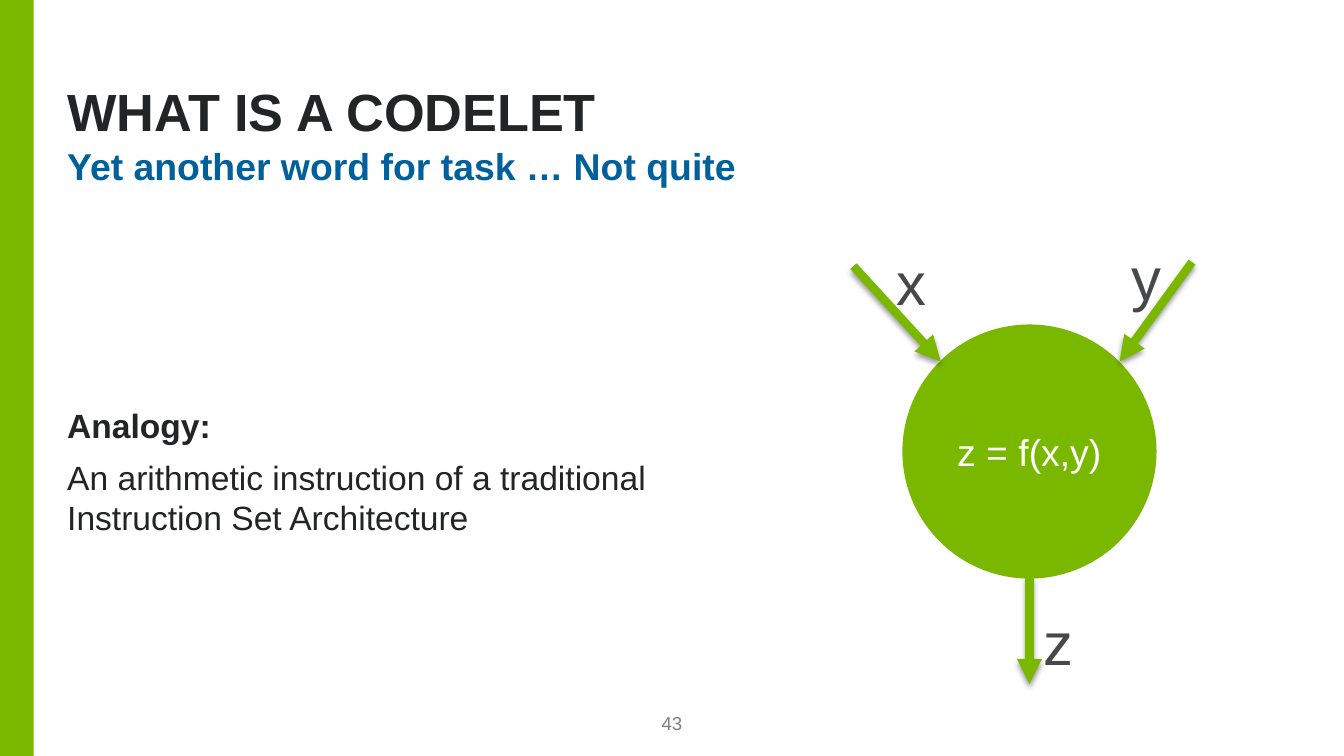
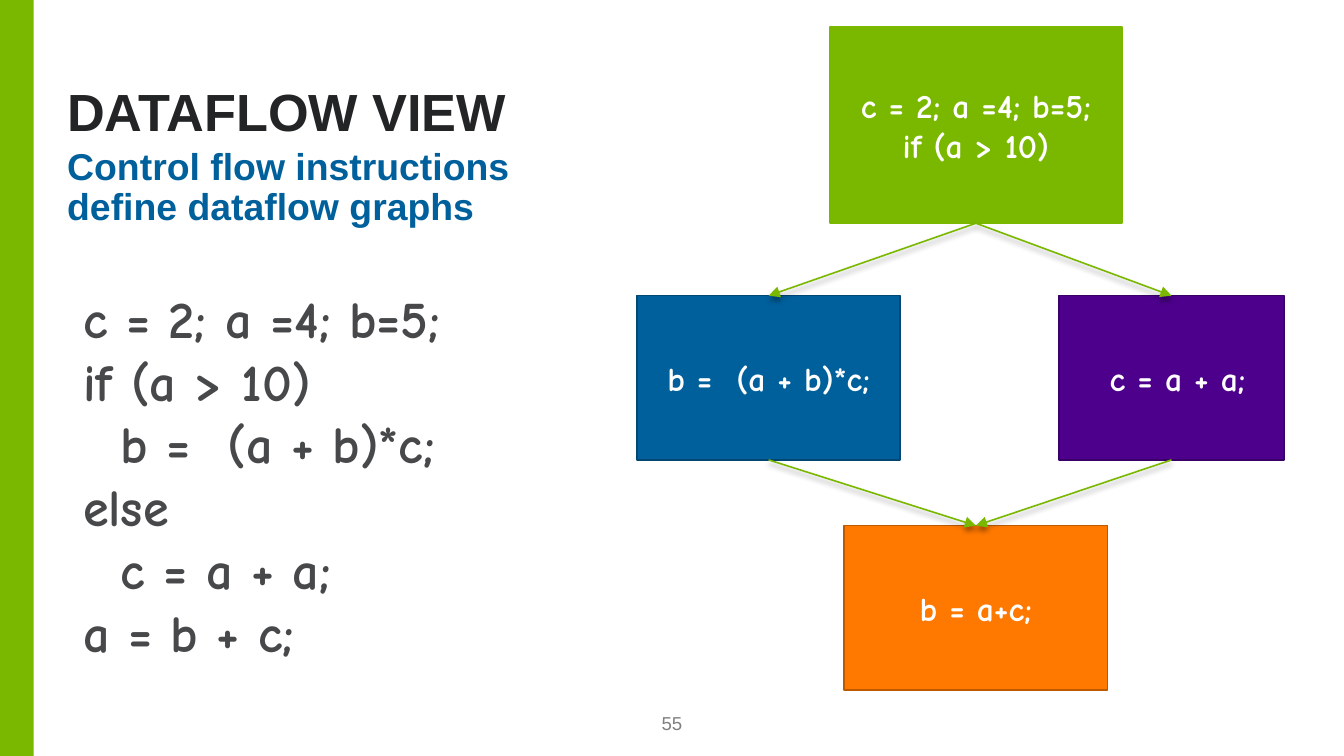
from pptx import Presentation
from pptx.dml.color import RGBColor
from pptx.enum.shapes import MSO_CONNECTOR as LINK, MSO_SHAPE as SHAPE
from pptx.enum.text import MSO_ANCHOR as ANCHOR, MSO_AUTO_SIZE as FIT, PP_ALIGN as ALIGN
from pptx.oxml import parse_xml
from pptx.oxml.ns import nsdecls, qn
from pptx.util import Pt

WIDE, HIGH, LEFT = 720, 405, 36
GREEN, BLUE, PURPLE, ORANGE = "7AB800", "00609C", "4D008C", "FF7900"
INK, SLATE, GRAY, WHITE = "232425", "47484A", "808080", "FFFFFF"
SANS, HAND = "Arial", "Comic Neue"

ANALOGY = [
    ("Analogy:", True, 2),
    ("An arithmetic instruction of a traditional Instruction Set Architecture", False, 1),
]
CIRCLE = (483.8, 174.2, 135.4, 135.4)
FLOWS = [  # label, label left and top, arrow start, arrow end
    ("z", (552.2, 321.1), (551.5, 309), (551.5, 366.5)),
    ("x", (473, 128.2), (457.2, 142.6), (504, 193.7)),
    ("y", (599, 125.3), (638.6, 140.4), (599.8, 193.7)),
]

CODE = ["c = 2; a =4; b=5;", "if (a > 10)", "  b =  (a + b)*c;", "else", "  c = a + a;", "a = b + c;"]
MID = 522.8
BLOCKS = {  # centre x, top, width, height, fill, outline, outline width, lines
    "test": (MID, 14.4, 156.4, 105.2, GREEN, GREEN, 0.75, CODE[:2]),
    "then": (411.8, 158.4, 141, 88, BLUE, "004773", 0.85, ["b =  (a + b)*c;"]),
    "else": (627.6, 158.4, 120.4, 88, PURPLE, "390068", 0.85, [" c = a + a;"]),
    "join": (MID, 281.6, 141, 88, ORANGE, "BD5A00", 0.85, ["b = a+c;"]),
}
EDGES = [("test", "then"), ("test", "else"), ("then", "join"), ("else", "join")]


def rgb(code):
    return RGBColor.from_string(code)


def pts(*nums):
    return [Pt(n) for n in nums]


def write(shape, lines, size=18, color=INK, font=SANS, bold=False, align=ALIGN.LEFT,
          anchor=ANCHOR.TOP, space=None, inset=None, wrap=True, fit=FIT.NONE):
    """Fill a shape with paragraphs; a line is text or (text, bold, spacing)."""
    frame = shape.text_frame
    frame.word_wrap, frame.auto_size, frame.vertical_anchor = wrap, fit, anchor
    if inset:
        (frame.margin_left, frame.margin_top,
         frame.margin_right, frame.margin_bottom) = pts(*inset)
    for i, line in enumerate(lines):
        text, heavy, lead = (line, bold, space) if isinstance(line, str) else line
        para = frame.add_paragraph() if i else frame.paragraphs[0]
        para.alignment, para.line_spacing = align, lead
        if i and not isinstance(line, str):
            para.space_before = Pt(6)
        run = para.add_run()
        run.text = text
        run.font.name, run.font.size, run.font.bold = font, Pt(size), heavy
        run.font.color.rgb = rgb(color)


def label(slide, box, lines, **style):
    write(slide.shapes.add_textbox(*pts(*box)), lines, **style)


def solid(slide, kind, box, fill, edge=None, width=0.75):
    shape = slide.shapes.add_shape(kind, *pts(*box))
    shape.shadow.inherit = False
    shape.fill.solid()
    shape.fill.fore_color.rgb = rgb(fill)
    if edge:
        shape.line.color.rgb = rgb(edge)
        shape.line.width = Pt(width)
    else:
        shape.line.fill.background()
    return shape


def arrow(slide, start, end, width):
    link = slide.shapes.add_connector(LINK.STRAIGHT, *pts(*start, *end))
    link.line.color.rgb = rgb(GREEN)
    link.line.width = Pt(width)
    props = link.element.spPr
    props.find(qn("a:ln")).append(parse_xml(f'<a:tailEnd {nsdecls("a")} type="triangle"/>'))
    props.append(parse_xml(
        f'<a:effectLst {nsdecls("a")}>'
        f'<a:outerShdw blurRad="{Pt(3)}" dist="{Pt(2)}" dir="5400000" rotWithShape="0">'
        '<a:srgbClr val="000000"><a:alpha val="40000"/></a:srgbClr>'
        '</a:outerShdw></a:effectLst>'))
    return link


def start(deck, title, sub, page):
    """Add a slide with the green band, headings and page number."""
    slide = deck.slides.add_slide(deck.slide_layouts[6])
    solid(slide, SHAPE.RECTANGLE, (0, 0, 18, HIGH), GREEN)
    flush = (0, 0, 0, 0)
    label(slide, (LEFT, 28, 659.6, 49), [title], size=28, bold=True,
          anchor=ANCHOR.BOTTOM, space=0.95, inset=flush)
    label(slide, (LEFT, 79.2, 659.6, 29.5), sub, size=20, color=BLUE,
          bold=True, space=0.9, inset=flush)
    label(slide, (342, 382.3, 36, 10.8), [page], size=10, color=GRAY,
          align=ALIGN.CENTER, anchor=ANCHOR.BOTTOM, inset=(0, 3.6, 0, 0))
    return slide


def codelet(deck):
    slide = start(deck, "WHAT IS A CODELET", ["Yet another word for task … Not quite"], "43")
    label(slide, (LEFT, 110.9, 347, 261.4), ANALOGY, anchor=ANCHOR.MIDDLE, inset=(0, 0, 0, 0))
    circle = solid(slide, SHAPE.OVAL, CIRCLE, GREEN, GREEN)
    write(circle, ["z = f(x,y)"], size=20, color=WHITE, align=ALIGN.CENTER,
          anchor=ANCHOR.MIDDLE, inset=(0, 0, 0, 0))
    for name, spot, tail, head in FLOWS:
        arrow(slide, tail, head, 4.5)
        label(slide, (*spot, 31, 46), [name], size=32, color=SLATE,
              wrap=False, fit=FIT.SHAPE_TO_FIT_TEXT)


def dataflow(deck):
    slide = start(deck, "DATAFLOW VIEW",
                  ["Control flow instructions", "define dataflow graphs"], "55")
    label(slide, (37.4, 149.8, 229, 211), CODE, size=28, color=SLATE, font=HAND,
          bold=True, fit=FIT.SHAPE_TO_FIT_TEXT)
    nodes = {}
    for name, (mid, top, wide, high, fill, edge, width, lines) in BLOCKS.items():
        box = (mid - wide / 2, top, wide, high)
        nodes[name] = solid(slide, SHAPE.RECTANGLE, box, fill, edge, width)
        write(nodes[name], lines, color=WHITE, font=HAND, bold=True,
              align=ALIGN.CENTER, anchor=ANCHOR.MIDDLE)
    for tail, head in EDGES:
        link = arrow(slide, (0, 0), (0, 0), 0.85)
        link.begin_connect(nodes[tail], 2)
        link.end_connect(nodes[head], 0)


def main():
    deck = Presentation()
    deck.slide_width, deck.slide_height = pts(WIDE, HIGH)
    codelet(deck)
    dataflow(deck)
    deck.save("out.pptx")


if __name__ == "__main__":
    main()
